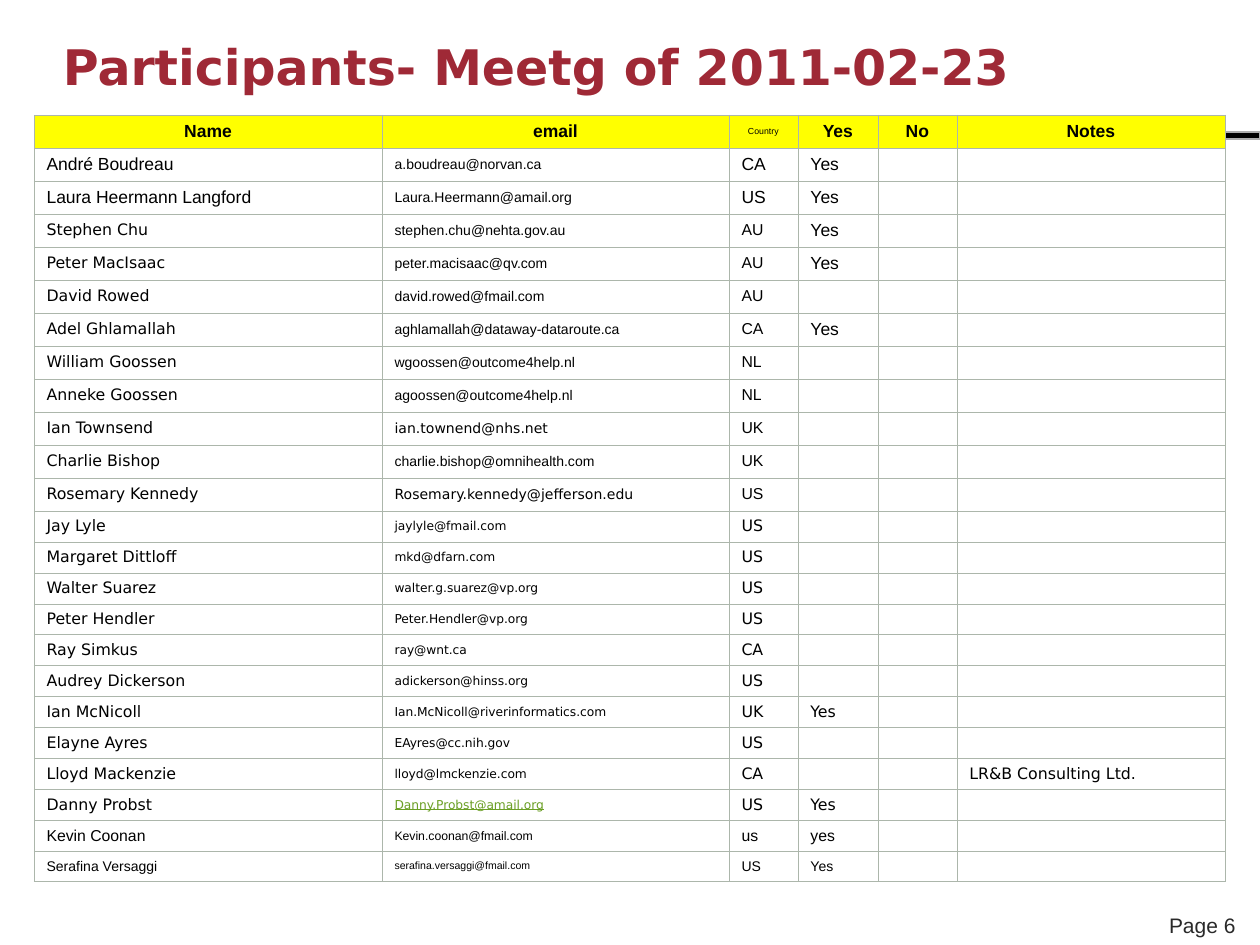
from lxml.etree import SubElement
from pptx import Presentation
from pptx.dml.color import RGBColor
from pptx.enum.shapes import MSO_SHAPE
from pptx.enum.text import MSO_ANCHOR, PP_ALIGN
from pptx.oxml.ns import qn
from pptx.util import Emu, Pt

PX = 914400 // 126  # 126 px to the inch

BLACK = RGBColor(0x00, 0x00, 0x00)
DARK = RGBColor(0x29, 0x29, 0x29)
RED = RGBColor(0x9F, 0x29, 0x36)
GREEN = RGBColor(0x6B, 0x9F, 0x25)
GREY = RGBColor(0xAD, 0xAD, 0xAD)
SAGE = RGBColor(0xAC, 0xB6, 0xAB)
YELLOW = RGBColor(0xFF, 0xFF, 0x00)

SANS = "Arial"
WIDE = "DejaVu Sans"

HEADS = ["Name", "email", "Country", "Yes", "No", "Notes"]
COLS = [348, 347, 69, 80, 79, 268]
ROWS = [33] * 12 + [31] * 11 + [30]

# Font and size of name, email, country and the last three columns
LOOKS = {
    "lead": [(SANS, 10), (SANS, 8), (SANS, 10), (SANS, 10)],
    "core": [(WIDE, 9), (SANS, 8), (SANS, 9), (SANS, 10)],
    "mixed": [(WIDE, 9), (WIDE, 8), (SANS, 9), (SANS, 10)],
    "wide": [(WIDE, 9), (WIDE, 7), (WIDE, 9), (WIDE, 9)],
    "small": [(SANS, 9), (SANS, 7), (SANS, 9), (SANS, 9)],
    "tiny": [(SANS, 8), (SANS, 6), (SANS, 8), (SANS, 8)],
}

# Look, name, email, country, then yes, no and notes where filled
PEOPLE = [
    ("lead", "André Boudreau", "a.boudreau@norvan.ca", "CA", "Yes"),
    ("lead", "Laura Heermann Langford", "Laura.Heermann@amail.org", "US", "Yes"),
    ("core", "Stephen Chu", "stephen.chu@nehta.gov.au", "AU", "Yes"),
    ("core", "Peter MacIsaac", "peter.macisaac@qv.com", "AU", "Yes"),
    ("core", "David Rowed", "david.rowed@fmail.com", "AU"),
    ("core", "Adel Ghlamallah", "aghlamallah@dataway-dataroute.ca", "CA", "Yes"),
    ("core", "William Goossen", "wgoossen@outcome4help.nl", "NL"),
    ("core", "Anneke Goossen", "agoossen@outcome4help.nl", "NL"),
    ("mixed", "Ian Townsend", "ian.townend@nhs.net", "UK"),
    ("core", "Charlie Bishop", "charlie.bishop@omnihealth.com", "UK"),
    ("mixed", "Rosemary Kennedy", "Rosemary.kennedy@jefferson.edu", "US"),
    ("wide", "Jay Lyle", "jaylyle@fmail.com", "US"),
    ("wide", "Margaret Dittloff", "mkd@dfarn.com", "US"),
    ("wide", "Walter Suarez", "walter.g.suarez@vp.org", "US"),
    ("wide", "Peter Hendler", "Peter.Hendler@vp.org", "US"),
    ("wide", "Ray Simkus", "ray@wnt.ca", "CA"),
    ("wide", "Audrey Dickerson", "adickerson@hinss.org", "US"),
    ("wide", "Ian McNicoll", "Ian.McNicoll@riverinformatics.com", "UK", "Yes"),
    ("wide", "Elayne Ayres", "EAyres@cc.nih.gov", "US"),
    ("wide", "Lloyd Mackenzie", "lloyd@lmckenzie.com", "CA", "", "",
     "LR&B Consulting Ltd."),
    ("wide", "Danny Probst", "Danny.Probst@amail.org", "US", "Yes"),
    ("small", "Kevin Coonan", "Kevin.coonan@fmail.com", "us", "yes"),
    ("tiny", "Serafina Versaggi", "serafina.versaggi@fmail.com", "US", "Yes"),
]
LINKED = "Danny.Probst@amail.org"


def px(*nums):
    return [Emu(n * PX) for n in nums]


def write(frame, text, font=SANS, size=10, color=BLACK, bold=False,
          line=False, align=PP_ALIGN.LEFT):
    para = frame.paragraphs[0]
    para.alignment = align
    if not text:
        # An empty cell still needs a small size, or its row grows
        SubElement(para._p, qn("a:endParaRPr"), sz=str(size * 100))
        return
    run = para.add_run()
    run.text = text
    run.font.name = font
    run.font.size = Pt(size)
    run.font.bold = bold
    run.font.underline = line
    run.font.color.rgb = color


def add_text(slide, box, text, anchor, inset=None, **form):
    frame = slide.shapes.add_textbox(*px(*box)).text_frame
    frame.word_wrap = True
    frame.vertical_anchor = anchor
    if inset is not None:
        frame.margin_left = frame.margin_right = inset
        frame.margin_top = frame.margin_bottom = inset
    write(frame, text, **form)


def add_bar(slide, box):
    bar = slide.shapes.add_shape(MSO_SHAPE.RECTANGLE, *px(*box))
    bar.shadow.inherit = False
    bar.fill.solid()
    bar.fill.fore_color.rgb = BLACK
    bar.line.color.rgb = GREY
    bar.line.width = Pt(0.75)


def add_edges(cell):
    props = cell._tc.get_or_add_tcPr()
    for side in ("a:lnL", "a:lnR", "a:lnT", "a:lnB"):
        edge = SubElement(props, qn(side), w=str(Pt(0.25)))
        fill = SubElement(edge, qn("a:solidFill"))
        SubElement(fill, qn("a:srgbClr"), val=str(SAGE))


def fill_cell(cell, text, back=None, **form):
    cell.vertical_anchor = MSO_ANCHOR.MIDDLE
    cell.margin_top, cell.margin_bottom = px(5, 5)
    add_edges(cell)
    if back is None:
        cell.fill.background()
    else:
        cell.fill.solid()
        cell.fill.fore_color.rgb = back
    write(cell.text_frame, text, **form)


def add_roster(slide, left, top):
    box = px(left, top, sum(COLS), sum(ROWS))
    table = slide.shapes.add_table(len(ROWS), len(COLS), *box).table
    table.first_row = table.horz_banding = False
    for col, width in zip(table.columns, px(*COLS)):
        col.width = width
    for row, height in zip(table.rows, px(*ROWS)):
        row.height = height

    # Header row
    for i, head in enumerate(HEADS):
        minor = head == "Country"
        fill_cell(table.cell(0, i), head, back=YELLOW, size=5 if minor else 10,
                  bold=not minor, align=PP_ALIGN.CENTER)

    # One row for each person
    for r, (look, *vals) in enumerate(PEOPLE, 1):
        vals += [""] * (len(COLS) - len(vals))
        for c, text in enumerate(vals):
            font, size = LOOKS[look][min(c, 3)]
            link = text == LINKED
            fill_cell(table.cell(r, c), text, font=font, size=size,
                      color=GREEN if link else BLACK, line=link)


def main():
    deck = Presentation()
    deck.slide_width, deck.slide_height = px(1260, 945)
    slide = deck.slides.add_slide(deck.slide_layouts[6])

    # Page number and rule
    add_text(slide, (1111, 906, 137, 38), "Page 6", MSO_ANCHOR.BOTTOM,
             size=12, color=DARK, align=PP_ALIGN.RIGHT)
    add_bar(slide, (60, 132, 1200, 7))

    # Title
    add_text(slide, (63, 16, 1152, 100), "Participants- Meetg of 2011-02-23",
             MSO_ANCHOR.MIDDLE, inset=0, font=WIDE, size=28, color=RED,
             bold=True)

    # Participants
    add_roster(slide, 34, 115)
    deck.save("out.pptx")


if __name__ == "__main__":
    main()
